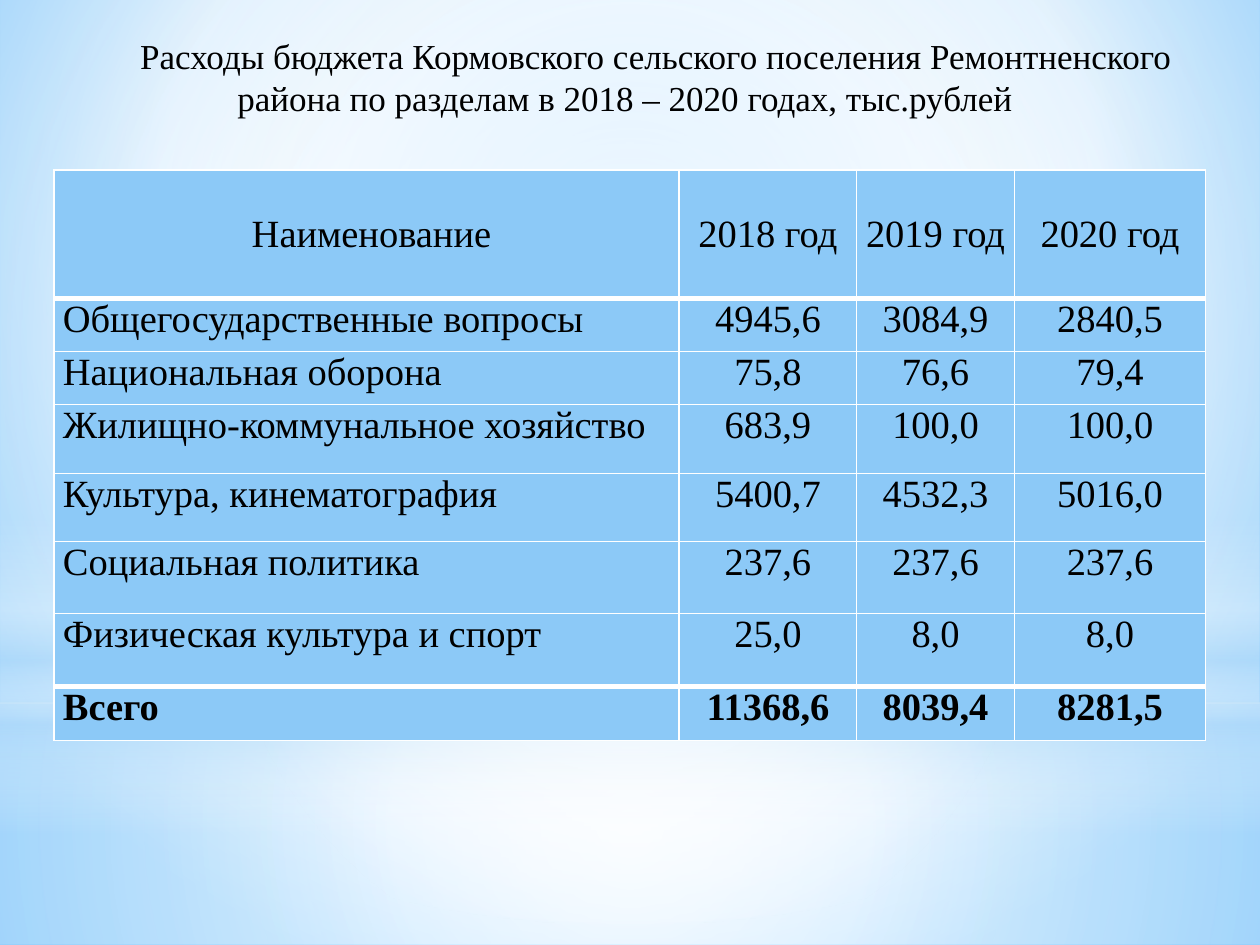
from lxml import etree
from pptx import Presentation
from pptx import util as u
from pptx.dml.color import RGBColor
from pptx.enum import shapes, text
from pptx.oxml.ns import qn

WIDTH, HEIGHT = 10, 7.5
FONT = "Times New Roman"
COLORS = {"text": "000000", "cell": "8CC9F7", "white": "FFFFFF",
          "haze": "B4DCFA", "sky": "9ED5FF", "deep": "5BB9FF"}

TITLE = ("Расходы бюджета Кормовского сельского поселения Ремонтненского "
         "района по разделам в 2018 – 2020 годах, тыс.рублей")
ROWS = [
    (" Наименование", "2018 год", "2019 год", "2020 год"),
    ("Общегосударственные вопросы", "4945,6", "3084,9", "2840,5"),
    ("Национальная оборона", "75,8", "76,6", "79,4"),
    ("Жилищно-коммунальное хозяйство", "683,9", "100,0", "100,0"),
    ("Культура, кинематография", "5400,7", "4532,3", "5016,0"),
    ("Социальная политика", "237,6", "237,6", "237,6"),
    ("Физическая культура и спорт", "25,0", "8,0", "8,0"),
    ("Всего", "11368,6", "8039,4", "8281,5"),
]
COLUMN_WIDTHS = [4.96, 1.41, 1.25, 1.52]
ROW_HEIGHTS = [1.02, 0.42, 0.42, 0.55, 0.54, 0.57, 0.58, 0.43]

CENTER = (50, 50, 50, 50)
# shape, top and height in inches, stops (position, colour, opacity), focus
GLOWS = [
    ("RECTANGLE", 5.58, 1.92,
     [(0, "white", 91), (37, "white", 76), (100, "haze", 79)], CENTER),
    ("RECTANGLE", 0, 5.58,
     [(0, "white", 89), (48, "white", 62), (100, "haze", 79)], CENTER),
    ("RECTANGLE", 4.12, 2.5,
     [(0, "white", 0), (29, "white", 30), (45, "haze", 40),
      (55, "white", 26), (65, "haze", 60), (100, "white", 0)], None),
    ("OVAL", 1.75, 5.58, [(0, "white", 100), (56, "white", 0)], CENTER),
]


def add_child(parent, tag, **attributes):
    child = etree.SubElement(parent, qn(tag))
    for name, value in attributes.items():
        child.set(name, str(value))
    return child


def set_gradient(fill, owner, stops, focus):
    """Fill with a circular gradient around focus, or a vertical one without it."""
    fill.gradient()
    gradient = owner.find(".//" + qn("a:gradFill"))
    for child in list(gradient):
        gradient.remove(child)
    stop_list = add_child(gradient, "a:gsLst")
    for position, color, opacity in stops:
        stop = add_child(stop_list, "a:gs", pos=position * 1000)
        solid = add_child(stop, "a:srgbClr", val=COLORS[color])
        if opacity < 100:
            add_child(solid, "a:alpha", val=opacity * 1000)
    if focus:
        circle = add_child(gradient, "a:path", path="circle")
        sides = {side: share * 1000 for side, share in zip("ltrb", focus)}
        add_child(circle, "a:fillToRect", **sides)
    else:
        add_child(gradient, "a:lin", ang=90 * 60000, scaled=0)


def add_background(slide):
    set_gradient(slide.background.fill, slide.element,
                 [(0, "sky", 100), (60, "white", 100), (100, "deep", 100)],
                 (20, 10, 20, 60))
    for kind, top, height, stops, focus in GLOWS:
        shape = slide.shapes.add_shape(
            shapes.MSO_SHAPE[kind], 0, u.Inches(top),
            u.Inches(WIDTH), u.Inches(height))
        shape.shadow.inherit = False
        shape.line.fill.background()
        set_gradient(shape.fill, shape.element, stops, focus)


def format_runs(paragraph, size, bold=False):
    for run in paragraph.runs:
        run.font.name = FONT
        run.font.size = u.Pt(size)
        run.font.bold = bold
        run.font.color.rgb = RGBColor.from_string(COLORS["text"])


def set_title(slide):
    title = slide.shapes.title
    title.left, title.top = u.Inches(0.39), u.Inches(0.22)
    title.width, title.height = u.Inches(9.14), u.Inches(0.77)
    frame = title.text_frame
    frame.text = TITLE
    frame.word_wrap = True
    frame.auto_size = text.MSO_AUTO_SIZE.NONE
    frame.vertical_anchor = text.MSO_ANCHOR.MIDDLE
    paragraph = frame.paragraphs[0]
    paragraph.alignment = text.PP_ALIGN.CENTER
    paragraph._p.get_or_add_pPr().set("indent", str(u.Inches(0.49)))
    format_runs(paragraph, 20)
    slide.shapes.element.append(title.element)  # in front of the glows


def set_borders(cell, top, bottom):
    properties = cell._tc.get_or_add_tcPr()
    for side, width in zip("LRTB", (1, 1, top, bottom)):
        line = add_child(properties, "a:ln" + side, w=u.Pt(width))
        solid = add_child(line, "a:solidFill")
        add_child(solid, "a:srgbClr", val=COLORS["white"])


def fill_cell(cell, value, row, column):
    header, total = row == 0, row == len(ROWS) - 1
    set_borders(cell, top=3 if row == 1 or total else 1,
                bottom=3 if header or row == len(ROWS) - 2 else 1)
    cell.fill.solid()
    cell.fill.fore_color.rgb = RGBColor.from_string(COLORS["cell"])
    cell.margin_left = cell.margin_right = u.Inches(0.07)
    cell.margin_top = cell.margin_bottom = 0
    cell.vertical_anchor = text.MSO_ANCHOR.MIDDLE if header else text.MSO_ANCHOR.TOP
    cell.text_frame.text = value
    paragraph = cell.text_frame.paragraphs[0]
    centered = header or column > 0
    paragraph.alignment = text.PP_ALIGN.CENTER if centered else text.PP_ALIGN.LEFT
    format_runs(paragraph, 22, bold=total)


def add_budget_table(slide):
    table = slide.shapes.add_table(
        len(ROWS), len(COLUMN_WIDTHS), u.Inches(0.43), u.Inches(1.35),
        u.Inches(sum(COLUMN_WIDTHS)), u.Inches(sum(ROW_HEIGHTS))).table
    for column, width in zip(table.columns, COLUMN_WIDTHS):
        column.width = u.Inches(width)
    for row, height in zip(table.rows, ROW_HEIGHTS):
        row.height = u.Inches(height)
    for row, values in enumerate(ROWS):
        for column, value in enumerate(values):
            fill_cell(table.cell(row, column), value, row, column)


def main():
    presentation = Presentation()
    presentation.slide_width = u.Inches(WIDTH)
    presentation.slide_height = u.Inches(HEIGHT)
    slide = presentation.slides.add_slide(presentation.slide_layouts[5])
    add_background(slide)
    add_budget_table(slide)
    set_title(slide)
    presentation.save("out.pptx")


if __name__ == "__main__":
    main()
